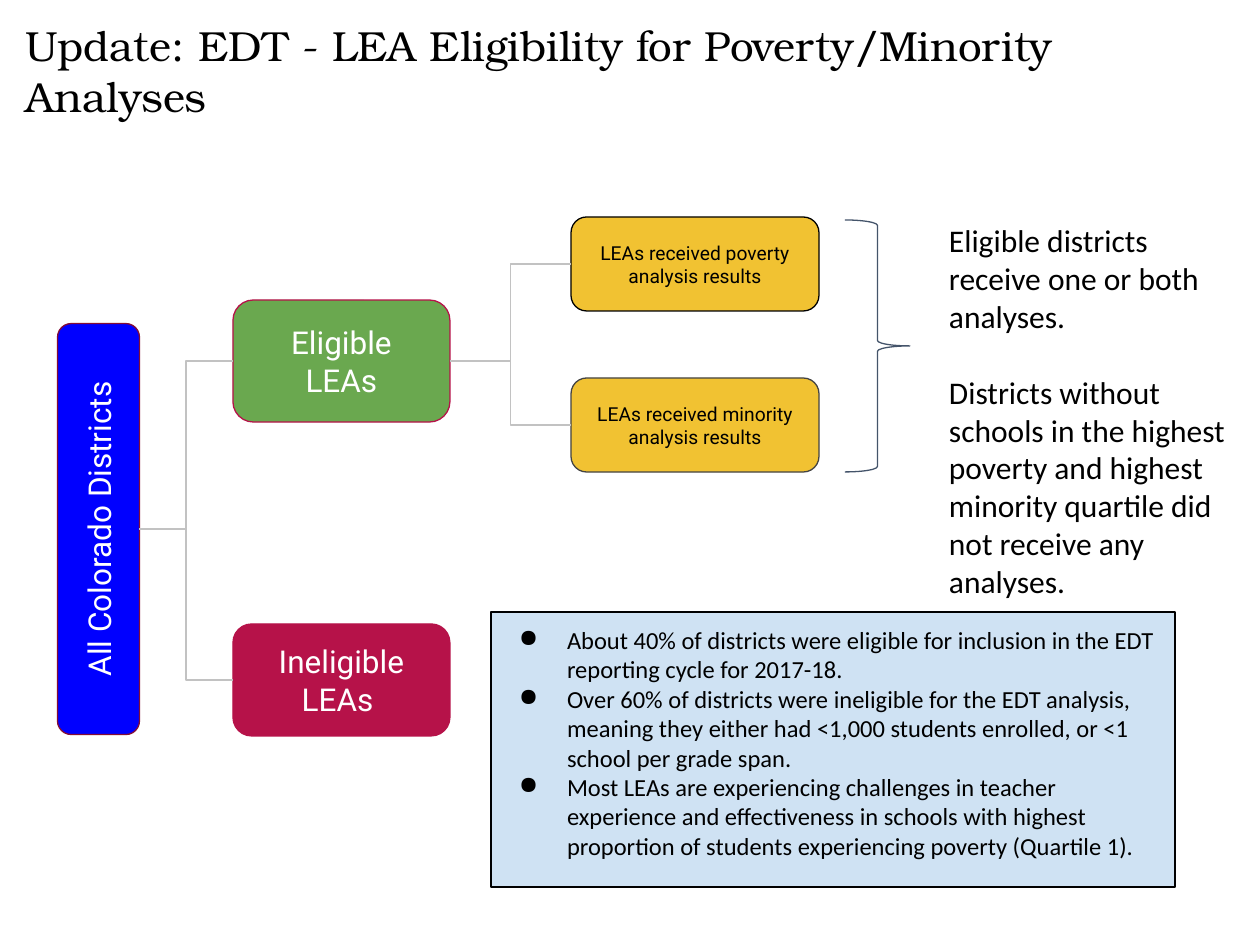
from lxml.etree import SubElement
from pptx import Presentation
from pptx.dml.color import RGBColor
from pptx.enum.shapes import MSO_CONNECTOR as Link, MSO_SHAPE as Kind
from pptx.enum.text import MSO_ANCHOR as Anchor, PP_ALIGN as Align
from pptx.oxml.ns import qn
from pptx.util import Emu, Pt

SCALE = 914400 / 126
GREY = "C2C2C2"
POINTS = [
    "About 40% of districts were eligible for inclusion in the EDT reporting cycle for 2017-18.",
    "Over 60% of districts were ineligible for the EDT analysis, meaning they either had "
    "<1,000 students enrolled, or <1 school per grade span.",
    "Most LEAs are experiencing challenges in teacher experience and effectiveness in schools "
    "with highest proportion of students experiencing poverty (Quartile 1).",
]
NOTES = [
    "Eligible districts receive one or both analyses.",
    "Districts without schools in the highest poverty and highest minority quartile "
    "did not receive any analyses.",
]


def px(*vals):
    """Turn pixel lengths into EMU."""
    return [Emu(round(v * SCALE)) for v in vals]


def color(code):
    """Turn a hex string into a colour."""
    return RGBColor.from_string(code)


def bullet(para):
    """Give a paragraph a round bullet and a hanging indent."""
    props = para._p.get_or_add_pPr()
    left, hang = px(63, -48)
    props.set("marL", str(left))
    props.set("indent", str(hang))
    SubElement(props, qn("a:buChar")).set("char", "●")


def write(shape, *lines, size=18, font="Roboto", ink="000000", align=Align.LEFT,
          anchor=Anchor.TOP, inset=13, gap=0, dots=False):
    """Fill a shape with formatted paragraphs."""
    frame = shape.text_frame
    frame.word_wrap = True
    frame.vertical_anchor = anchor
    pad = px(inset)[0]
    frame.margin_left = frame.margin_right = pad
    frame.margin_top = frame.margin_bottom = pad
    for i, line in enumerate(lines):
        para = frame.add_paragraph() if i else frame.paragraphs[0]
        para.alignment = align
        if i and gap:
            para.space_before = Pt(gap)
        if dots:
            bullet(para)
        run = para.add_run()
        run.text = line
        run.font.size = Pt(size)
        run.font.name = font
        run.font.color.rgb = color(ink)


def label(slide, box, *lines, **form):
    """Add a text box."""
    write(slide.shapes.add_textbox(*px(*box)), *lines, **form)


def draw(slide, kind, box, edge, fill=None, width=0.75):
    """Add a preset shape with its line and fill."""
    shape = slide.shapes.add_shape(kind, *px(*box))
    shape.shadow.inherit = False
    shape.line.color.rgb = color(edge)
    shape.line.width = Pt(width)
    if fill:
        shape.fill.solid()
        shape.fill.fore_color.rgb = color(fill)
    else:
        shape.fill.background()
    return shape


def node(slide, box, text, fill, edge, **form):
    """Add a rounded box of the tree."""
    shape = draw(slide, Kind.ROUNDED_RECTANGLE, box, edge, fill)
    write(shape, text, align=Align.CENTER, anchor=Anchor.MIDDLE, **form)
    return shape


def join(slide, start, child, parent=None):
    """Link a point, or a parent's right side, to a child's left side."""
    end = child.left, child.top + child.height // 2
    link = slide.shapes.add_connector(Link.ELBOW, *px(*start), *end)
    if parent is not None:
        link.begin_connect(parent, 3)
    link.end_connect(child, 1)
    link.line.color.rgb = color(GREY)
    link.line.width = Pt(0.75)
    SubElement(link._element.spPr, qn("a:effectLst"))


def tree(slide):
    """Add the tree of districts."""
    white = "FFFFFF"
    root = node(slide, (-107, 488, 411, 82), "All Colorado Districts",
                "0000FF", "840D35", ink=white)
    root.rotation = 270
    lower = node(slide, (233, 624, 217, 112), "Ineligible LEAs ",
                 "B61249", "B61249", ink=white)
    upper = node(slide, (233, 300, 217, 122), "Eligible LEAs",
                 "6AA84F", "B61249", ink=white)
    for child in (lower, upper):
        join(slide, (139, 529), child)
    for top, topic, edge in ((217, "poverty", "000000"), (378, "minority", "434343")):
        leaf = node(slide, (571, top, 248, 94), f"LEAs received {topic} analysis results",
                    "F1C232", edge, size=11)
        join(slide, (450, 361), leaf, upper)


def main():
    """Build the slide and save it."""
    deck = Presentation()
    deck.slide_width, deck.slide_height = px(1260, 945)
    slide = deck.slides.add_slide(deck.slide_layouts[6])
    label(slide, (26, 20, 1184, 98),
          "Update: EDT - LEA Eligibility for Poverty/Minority Analyses",
          size=24, font="TeX Gyre Bonum", inset=0)
    tree(slide)
    label(slide, (936, 208, 304, 276), *NOTES, font="Calibri", gap=22)
    draw(slide, Kind.RIGHT_BRACE, (845, 220, 65, 252), "44546A")
    panel = draw(slide, Kind.RECTANGLE, (491, 612, 684, 275), "000000", "CFE2F3", 1.5)
    write(panel, *POINTS, size=14, font="Calibri", dots=True)
    deck.save("out.pptx")


if __name__ == "__main__":
    main()
